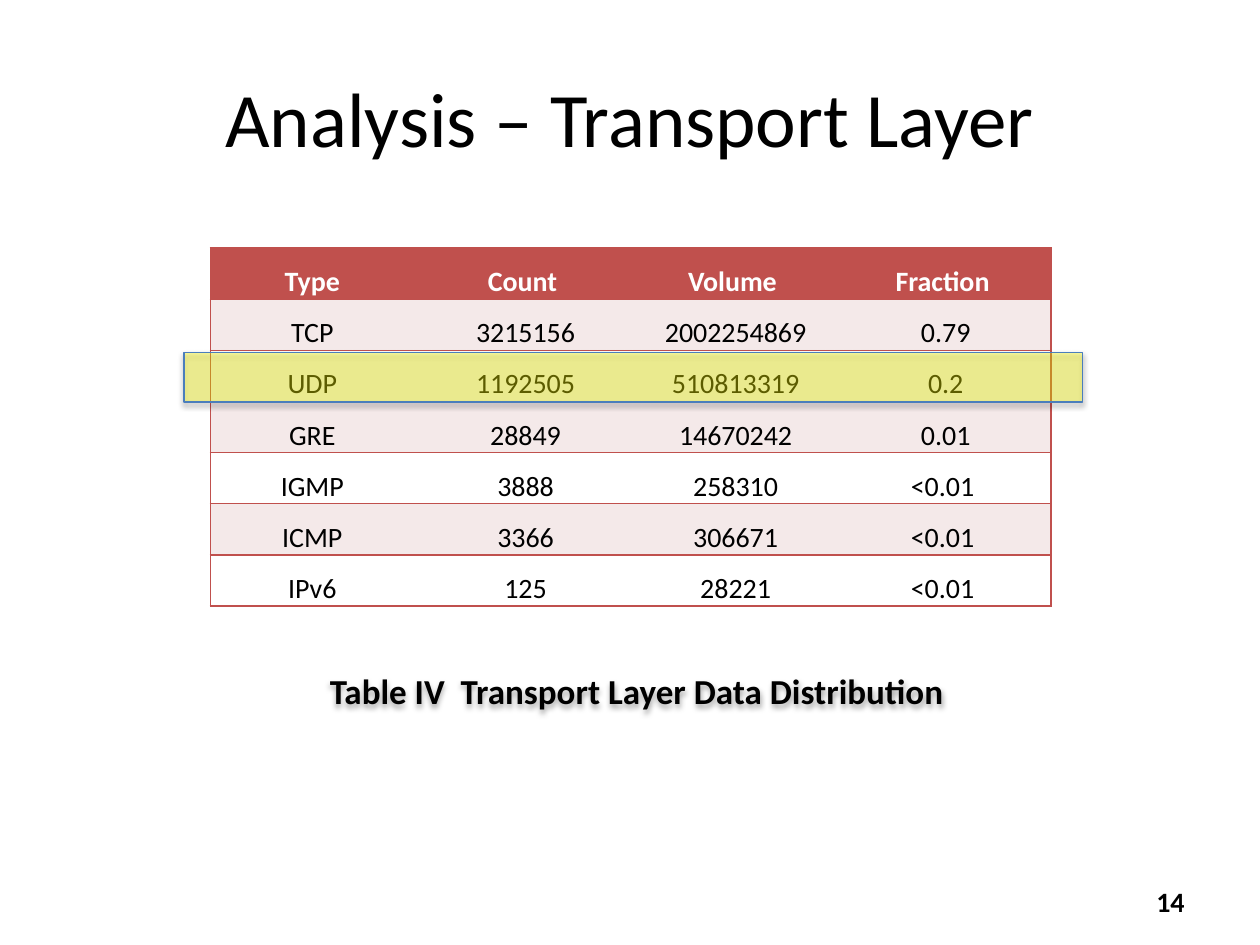
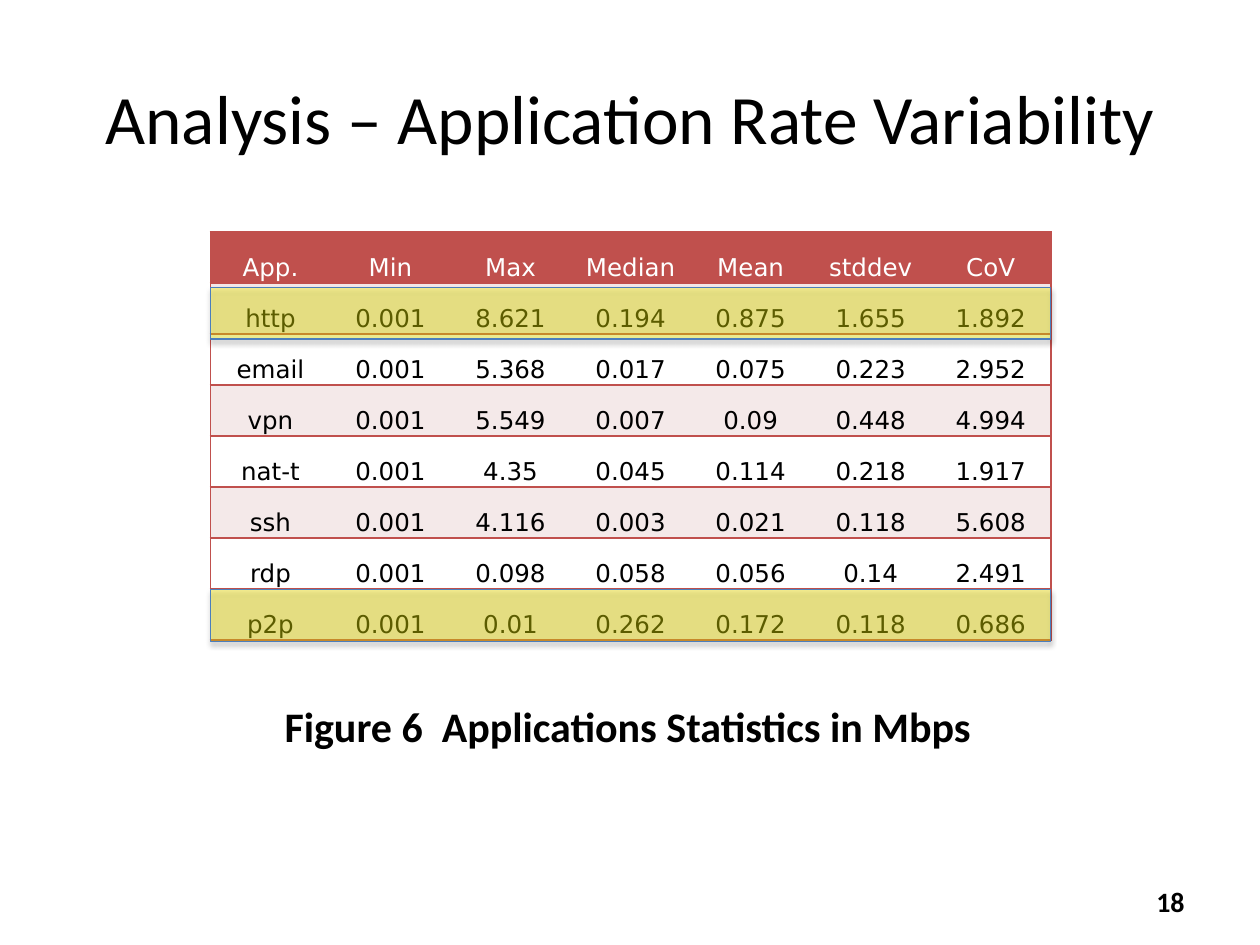
"""Build two slides of traffic analysis tables with highlighted rows."""
from dataclasses import dataclass

import lxml.etree
import pptx
import pptx.dml.color
import pptx.enum.shapes
import pptx.enum.text
import pptx.oxml.ns
import pptx.shapes.autoshape
import pptx.slide
import pptx.table
import pptx.text.text
import pptx.util

Inches = pptx.util.Inches
Pt = pptx.util.Pt
RGBColor = pptx.dml.color.RGBColor
Align = pptx.enum.text.PP_ALIGN
Anchor = pptx.enum.text.MSO_ANCHOR
qn = pptx.oxml.ns.qn

BLACK = RGBColor(0x00, 0x00, 0x00)
WHITE = RGBColor(0xFF, 0xFF, 0xFF)
RED = RGBColor(0xC0, 0x50, 0x4D)
PINK = RGBColor(0xF4, 0xE9, 0xE9)
YELLOW = RGBColor(0xFF, 0xFF, 0x00)
BLUE = RGBColor(0x4B, 0x7E, 0xBC)

BODY_FONT = "Calibri"
TABLE_LEFT, TABLE_WIDTH = 1.67, 6.67


@dataclass(frozen=True)
class Box:
    """A rectangle in inches."""
    left: float
    top: float
    width: float
    height: float

    def lengths(self) -> tuple[pptx.util.Length, ...]:
        """Return the four measures as lengths."""
        return tuple(Inches(n) for n in (self.left, self.top, self.width, self.height))


@dataclass(frozen=True)
class TextStyle:
    """How a piece of text looks."""
    size: float
    bold: bool = False
    align: Align = Align.CENTER
    anchor: Anchor = Anchor.MIDDLE
    font: str = BODY_FONT
    color: RGBColor = BLACK


@dataclass(frozen=True)
class Caption:
    """The line below a table."""
    text: str
    box: Box
    style: TextStyle
    shadow: bool = False


@dataclass(frozen=True)
class Statistics:
    """A table of values, its header row first."""
    rows: list[list[str]]
    top: float
    height: float
    size: float
    font: str
    bold_header: bool


@dataclass(frozen=True)
class AnalysisSlide:
    """Everything that differs between the slides."""
    title: str
    title_size: float
    statistics: Statistics
    highlights: list[Box]
    caption: Caption
    number: int


TITLE_BOX = Box(0.5, 0.3, 9, 1.25)
NUMBER_BOX = Box(7.17, 6.95, 2.33, 0.4)
NUMBER_STYLE = TextStyle(16, bold=True, align=Align.RIGHT)

SLIDES = [
    AnalysisSlide(
        "Analysis – Transport Layer", 44,
        Statistics([
            ["Type ", "Count ", "Volume ", "Fraction "],
            ["TCP ", "3215156", "2002254869", "0.79"],
            ["UDP ", "1192505", "510813319", "0.2"],
            ["GRE ", "28849", "14670242", "0.01"],
            ["IGMP ", "3888", "258310", "<0.01 "],
            ["ICMP ", "3366", "306671", "<0.01 "],
            ["IPv6 ", "125", "28221", "<0.01 "],
        ], 1.97, 2.84, 16, BODY_FONT, True),
        [Box(1.46, 2.8, 7.13, 0.39)],
        Caption("Table IV  Transport Layer Data Distribution ",
                Box(2.31, 5.15, 5.55, 0.66), TextStyle(20, bold=True), shadow=True),
        14),
    AnalysisSlide(
        "Analysis – Application Rate Variability", 39.6,
        Statistics([
            ["App.", "Min", "Max", "Median", "Mean", "stddev", "CoV"],
            ["http", "0.001", "8.621", "0.194", "0.875", "1.655", "1.892"],
            ["email", "0.001", "5.368", "0.017", "0.075", "0.223", "2.952"],
            ["vpn", "0.001", "5.549", "0.007", "0.09", "0.448", "4.994"],
            ["nat-t", "0.001", "4.35", "0.045", "0.114", "0.218", "1.917"],
            ["ssh", "0.001", "4.116", "0.003", "0.021", "0.118", "5.608"],
            ["rdp", "0.001", "0.098", "0.058", "0.056", "0.14", "2.491"],
            ["p2p", "0.001", "0.01", "0.262", "0.172", "0.118", "0.686"],
        ], 1.84, 3.24, 14, "DejaVu Sans", False),
        [Box(TABLE_LEFT, top, TABLE_WIDTH, 0.41) for top in (2.28, 4.68)],
        Caption("Figure 6  Applications Statistics in Mbps", Box(2.16, 5.51, 5.72, 0.5),
                TextStyle(24, bold=True, align=Align.LEFT, anchor=Anchor.TOP)),
        18),
]


def write(frame: pptx.text.text.TextFrame, text: str, style: TextStyle) -> None:
    """Put one styled paragraph into a text frame."""
    frame.text = text
    paragraph = frame.paragraphs[0]
    paragraph.alignment = style.align
    font = paragraph.runs[0].font
    font.name = style.font
    font.size = Pt(style.size)
    font.bold = style.bold
    font.color.rgb = style.color


def add_text(slide: pptx.slide.Slide, box: Box, text: str,
             style: TextStyle) -> pptx.shapes.autoshape.Shape:
    """Add a wrapped text box."""
    textbox = slide.shapes.add_textbox(*box.lengths())
    frame = textbox.text_frame
    frame.word_wrap = True
    frame.vertical_anchor = style.anchor
    write(frame, text, style)
    return textbox


def add_color(parent: lxml.etree._Element, color: RGBColor) -> lxml.etree._Element:
    """Append a colour element."""
    return lxml.etree.SubElement(parent, qn("a:srgbClr"), val=str(color))


def set_alpha(color: lxml.etree._Element, percent: int) -> None:
    """Make a colour element partly transparent."""
    lxml.etree.SubElement(color, qn("a:alpha"), val=str(percent * 1000))


def drop_shadow(shape: pptx.shapes.autoshape.Shape) -> None:
    """Give a shape a soft shadow straight below it."""
    shape.shadow.inherit = False
    effects = shape.element.spPr.find(qn("a:effectLst"))
    shadow = lxml.etree.SubElement(
        effects, qn("a:outerShdw"), blurRad=str(Pt(3.1)), dist=str(Pt(1.8)),
        dir=str(90 * 60000), rotWithShape="0")
    set_alpha(add_color(shadow, BLACK), 35)


def add_highlight(slide: pptx.slide.Slide, box: Box) -> None:
    """Lay a see-through yellow bar over a table row."""
    bar = slide.shapes.add_shape(pptx.enum.shapes.MSO_SHAPE.RECTANGLE, *box.lengths())
    bar.fill.solid()
    bar.fill.fore_color.rgb = YELLOW
    set_alpha(bar.element.spPr.find(qn("a:solidFill")).find(qn("a:srgbClr")), 36)
    bar.line.color.rgb = BLUE
    bar.line.width = Pt(0.75)
    drop_shadow(bar)


def set_borders(cell: pptx.table._Cell, ruled_sides: str) -> None:
    """Rule the named sides of a cell and clear the others."""
    properties = cell._tc.get_or_add_tcPr()
    for side in "LRTB":
        border = lxml.etree.SubElement(properties, qn(f"a:ln{side}"), w=str(Pt(1)))
        if side in ruled_sides:
            add_color(lxml.etree.SubElement(border, qn("a:solidFill")), RED)
        else:
            lxml.etree.SubElement(border, qn("a:noFill"))


def add_statistics(slide: pptx.slide.Slide, statistics: Statistics) -> None:
    """Add a ruled table with a red header and alternating rows."""
    rows = statistics.rows
    last_column = len(rows[0]) - 1
    box = Box(TABLE_LEFT, statistics.top, TABLE_WIDTH, statistics.height)
    table = slide.shapes.add_table(len(rows), len(rows[0]), *box.lengths()).table
    table.first_row = False
    table.horz_banding = False
    for r, values in enumerate(rows):
        is_header = r == 0
        style = TextStyle(statistics.size, bold=is_header and statistics.bold_header,
                          font=statistics.font, color=WHITE if is_header else BLACK)
        fill = RED if is_header else PINK if r % 2 else WHITE
        for c, value in enumerate(values):
            cell = table.cell(r, c)
            write(cell.text_frame, value, style)
            cell.vertical_anchor = Anchor.BOTTOM
            cell.margin_left = cell.margin_right = cell.margin_top = Inches(0.01)
            cell.margin_bottom = 0
            set_borders(cell, "TB" + "L" * (c == 0) + "R" * (c == last_column))
            cell.fill.solid()
            cell.fill.fore_color.rgb = fill


def add_analysis(deck: pptx.presentation.Presentation, content: AnalysisSlide) -> None:
    """Add one analysis slide."""
    slide = deck.slides.add_slide(deck.slide_layouts[6])
    add_text(slide, TITLE_BOX, content.title, TextStyle(content.title_size))
    add_statistics(slide, content.statistics)
    for box in content.highlights:
        add_highlight(slide, box)
    add_text(slide, NUMBER_BOX, str(content.number), NUMBER_STYLE)
    caption = content.caption
    caption_box = add_text(slide, caption.box, caption.text, caption.style)
    if caption.shadow:
        drop_shadow(caption_box)


def main() -> None:
    """Build and save the presentation."""
    deck = pptx.Presentation()
    deck.slide_width, deck.slide_height = Inches(10), Inches(7.5)
    for content in SLIDES:
        add_analysis(deck, content)
    deck.save("out.pptx")


if __name__ == "__main__":
    main()
